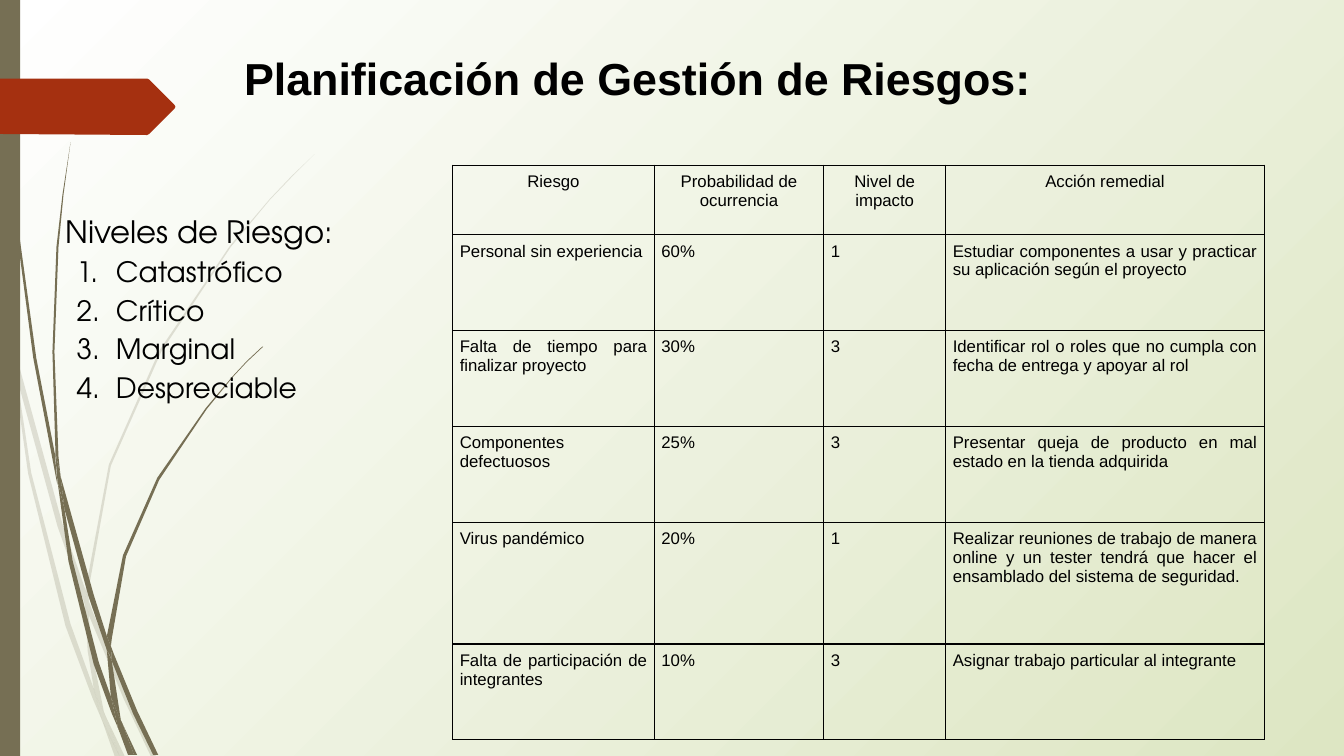
from dataclasses import dataclass

from lxml import etree
from pptx import Presentation
from pptx.dml.color import RGBColor
from pptx.enum.shapes import MSO_SHAPE
from pptx.enum.text import MSO_ANCHOR, MSO_AUTO_SIZE, PP_ALIGN
from pptx.oxml.ns import qn
from pptx.util import Inches, Pt

CENTER, JUSTIFY, LEFT = PP_ALIGN.CENTER, PP_ALIGN.JUSTIFY, PP_ALIGN.LEFT
TOP = MSO_ANCHOR.TOP
GROW = MSO_AUTO_SIZE.SHAPE_TO_FIT_TEXT
RECTANGLE = MSO_SHAPE.RECTANGLE
OUTLINE_UNIT = Inches(0.01)


@dataclass(frozen=True)
class Theme:
    text: str = "000000"
    stem: str = "766F54"
    tag: str = "A53010"
    glow: str = "FFFFFF"
    meadow: str = "DDE6C3"
    sans: str = "Arial"
    geometric: str = "TeX Gyre Adventor"
    title_size: float = 32
    heading_size: float = 22
    list_size: float = 20
    table_size: float = 12
    border: float = 1


THEME = Theme()


@dataclass(frozen=True)
class Plant:
    """Grass blades, each a closed outline in hundredths of an inch."""
    opacity: int
    blades: tuple


@dataclass(frozen=True)
class Risk:
    name: str
    probability: str
    impact: str
    action: str


PALE_GRASS = Plant(20, (
    ((11, 350), (8, 322), (0, 282), (0, 299), (10, 344)),
    ((57, 522), (84, 599), (85, 586), (62, 520), (14, 345), (17, 376)),
    ((92, 607), (88, 596), (88, 610), (123, 694), (150, 751), (155, 751), (127, 691)),
    ((119, 751), (124, 751), (105, 711)),
    ((93, 683), (70, 619), (31, 469), (17, 376), (11, 350), (28, 470), (65, 621),
     (92, 693), (101, 714), (99, 707)),
    ((84, 599), (87, 646), (93, 683), (96, 692), (105, 711), (103, 706), (91, 646),
     (88, 610), (88, 608)),
    ((88, 584), (110, 462), (160, 349), (229, 245), (268, 198), (290, 175), (312, 153),
     (289, 175), (268, 197), (228, 244), (158, 348), (108, 461), (85, 584), (85, 586),
     (88, 596)),
    ((101, 714), (114, 751), (119, 751)),
    ((88, 608), (88, 610), (88, 596), (85, 586), (84, 599)),
    ((96, 692), (93, 683), (99, 707), (101, 714), (119, 751), (105, 711)),
))

DARK_GRASS = Plant(100, (
    ((7, 110), (17, 233), (33, 355), (56, 476), (57, 481), (55, 457), (55, 453),
     (36, 355), (19, 232), (8, 109), (5, 48), (4, 0), (3, 0), (4, 48)),
    ((88, 592), (106, 645), (106, 631), (93, 590), (60, 472), (64, 505)),
    ((113, 649), (110, 641), (111, 656), (132, 708), (152, 749), (157, 749), (136, 705)),
    ((110, 691), (98, 657), (72, 556), (64, 505), (57, 477), (68, 557), (93, 659),
     (111, 708), (117, 722), (116, 717)),
    ((60, 472), (58, 453), (54, 349), (58, 245), (63, 193), (70, 141), (62, 193),
     (56, 245), (52, 349), (55, 449)),
    ((133, 749), (136, 749), (122, 719)),
    ((57, 477), (64, 505), (60, 472), (55, 449), (55, 453)),
    ((111, 633), (125, 552), (158, 476), (205, 406), (231, 374), (245, 359), (261, 344),
     (260, 344), (245, 358), (231, 373), (204, 405), (156, 474), (122, 551), (106, 631),
     (110, 641)),
    ((117, 722), (127, 749), (131, 749)),
    ((106, 645), (110, 691), (116, 706), (122, 719), (120, 715), (111, 656), (109, 651)),
    ((106, 645), (109, 650), (111, 656), (110, 641), (106, 631)),
    ((116, 706), (110, 691), (116, 717), (117, 722), (130, 749), (133, 749), (122, 719)),
))

TAG_OUTLINE = ((0, 78), (146, 78), (148, 79), (173, 104), (174, 106), (173, 108),
               (148, 133), (146, 134), (0, 133))

HEADERS = ("Riesgo", "Probabilidad de ocurrencia", "Nivel de impacto", "Acción remedial")
RISKS = (
    Risk("Personal sin experiencia", "60%", "1",
         "Estudiar componentes a usar y practicar su aplicación según el proyecto"),
    Risk("Falta de tiempo para finalizar proyecto", "30%", "3",
         "Identificar rol o roles que no cumpla con fecha de entrega y apoyar al rol"),
    Risk("Componentes defectuosos", "25%", "3",
         "Presentar queja de producto en mal estado en la tienda adquirida"),
    Risk("Virus pandémico", "20%", "1",
         "Realizar reuniones de trabajo de manera online y un tester tendrá que hacer "
         "el ensamblado del sistema de seguridad."),
    Risk("Falta de participación de integrantes", "10%", "3",
         "Asignar trabajo particular al integrante"),
)
COLUMN_WIDTHS = (2, 1.68, 1.21, 3.16)
ROW_HEIGHTS = (0.69, 0.95, 0.95, 0.95, 1.21, 0.95)
LEVELS = ("Catastrófico", "Crítico", "Marginal", "Despreciable")


def add_node(parent, tag: str, **attributes: str):
    return etree.SubElement(parent, qn(tag), attributes)


def write_text(paragraph, text: str, *, size: float, font: str = THEME.sans,
               bold: bool = False, align=LEFT, spacing: float = 1.0) -> None:
    paragraph.alignment = align
    paragraph.line_spacing = spacing
    paragraph.space_before = Pt(0)
    run = paragraph.add_run()
    run.text = text
    run.font.size, run.font.name, run.font.bold = Pt(size), font, bold
    run.font.color.rgb = RGBColor.from_string(THEME.text)


def paint(shape, color: str, opacity: int = 100) -> None:
    shape.shadow.inherit = False
    shape.line.fill.background()
    shape.fill.solid()
    shape.fill.fore_color.rgb = RGBColor.from_string(color)
    if opacity < 100:
        tint = shape.fill._xPr.find(".//" + qn("a:srgbClr"))
        add_node(tint, "a:alpha", val=str(opacity * 1000))


def add_outline(shapes, points: tuple, color: str, opacity: int = 100) -> None:
    builder = shapes.build_freeform(*points[0], scale=OUTLINE_UNIT)
    builder.add_line_segments(points[1:], close=True)
    paint(builder.convert_to_shape(), color, opacity)


def paint_background(slide) -> None:
    fill = slide.background.fill
    fill.gradient()
    for stop, color in zip(fill.gradient_stops, (THEME.glow, THEME.meadow)):
        stop.color.rgb = RGBColor.from_string(color)
    linear = slide.element.find(".//" + qn("a:lin"))
    gradient = linear.getparent()
    gradient.remove(linear)
    circle = add_node(gradient, "a:path", path="circle")
    add_node(circle, "a:fillToRect", r="100000", b="100000")


def add_scenery(shapes) -> None:
    for plant in (PALE_GRASS, DARK_GRASS):
        for blade in plant.blades:
            add_outline(shapes, blade, THEME.stem, plant.opacity)
    paint(shapes.add_shape(RECTANGLE, 0, 0, Inches(0.2), Inches(7.5)), THEME.stem)
    add_outline(shapes, TAG_OUTLINE, THEME.tag)


def format_cell(cell) -> None:
    cell.margin_left = cell.margin_right = Inches(0.07)
    cell.margin_top = cell.margin_bottom = Inches(0.07)
    cell.vertical_anchor = TOP
    properties = cell._tc.get_or_add_tcPr()
    for side in ("a:lnL", "a:lnR", "a:lnT", "a:lnB"):
        border = add_node(properties, side, w=str(Pt(THEME.border)))
        add_node(add_node(border, "a:solidFill"), "a:srgbClr", val=THEME.text)
    cell.fill.background()


def add_risk_table(shapes) -> None:
    rows = [HEADERS] + [(r.name, r.probability, r.impact, r.action) for r in RISKS]
    table = shapes.add_table(len(rows), len(HEADERS), Inches(4.49), Inches(1.64),
                             Inches(sum(COLUMN_WIDTHS)), Inches(sum(ROW_HEIGHTS))).table
    table.first_row = table.horz_banding = False
    for column, width in zip(table.columns, COLUMN_WIDTHS):
        column.width = Inches(width)
    for index, (row, height, texts) in enumerate(zip(table.rows, ROW_HEIGHTS, rows)):
        row.height = Inches(height)
        for cell, text in zip(row.cells, texts):
            format_cell(cell)
            write_text(cell.text_frame.paragraphs[0], text, size=THEME.table_size,
                       align=JUSTIFY if index else CENTER)


def place_on_top(placeholder, left: float, top: float, width: float, height: float):
    """Move a placeholder in front of the scenery and return its text frame."""
    placeholder.element.getparent().append(placeholder.element)
    placeholder.left, placeholder.top = Inches(left), Inches(top)
    placeholder.width, placeholder.height = Inches(width), Inches(height)
    frame = placeholder.text_frame
    frame.margin_left = frame.margin_right = Inches(0.1)
    frame.margin_top = frame.margin_bottom = Inches(0.1)
    frame.vertical_anchor, frame.word_wrap, frame.auto_size = TOP, True, GROW
    return frame


def set_marker(paragraph, numbered: bool) -> None:
    properties = paragraph._p.get_or_add_pPr()
    properties.set("marL", str(Inches(0.5) if numbered else 0))
    properties.set("indent", str(Inches(-0.39) if numbered else 0))
    if numbered:
        add_node(add_node(properties, "a:buClr"), "a:srgbClr", val=THEME.text)
        add_node(properties, "a:buFont", typeface=THEME.geometric)
        add_node(properties, "a:buAutoNum", type="arabicPeriod")
    else:
        add_node(properties, "a:buNone")


def fill_levels(frame) -> None:
    heading = frame.paragraphs[0]
    write_text(heading, "Niveles de Riesgo:", size=THEME.heading_size, font=THEME.geometric)
    set_marker(heading, numbered=False)
    for level in LEVELS:
        item = frame.add_paragraph()
        write_text(item, level, size=THEME.list_size, font=THEME.geometric,
                   align=JUSTIFY, spacing=1.15)
        set_marker(item, numbered=True)


def main() -> None:
    deck = Presentation()
    deck.slide_width, deck.slide_height = Inches(13.33), Inches(7.5)
    slide = deck.slides.add_slide(deck.slide_layouts[1])
    title, levels = slide.placeholders
    paint_background(slide)
    add_scenery(slide.shapes)
    add_risk_table(slide.shapes)
    title_frame = place_on_top(title, 2.32, 0.4, 8.69, 0.74)
    write_text(title_frame.paragraphs[0], "Planificación de Gestión de Riesgos:",
               size=THEME.title_size, bold=True)
    fill_levels(place_on_top(levels, 0.55, 2.01, 2.9, 2.07))
    deck.save("out.pptx")


if __name__ == "__main__":
    main()
